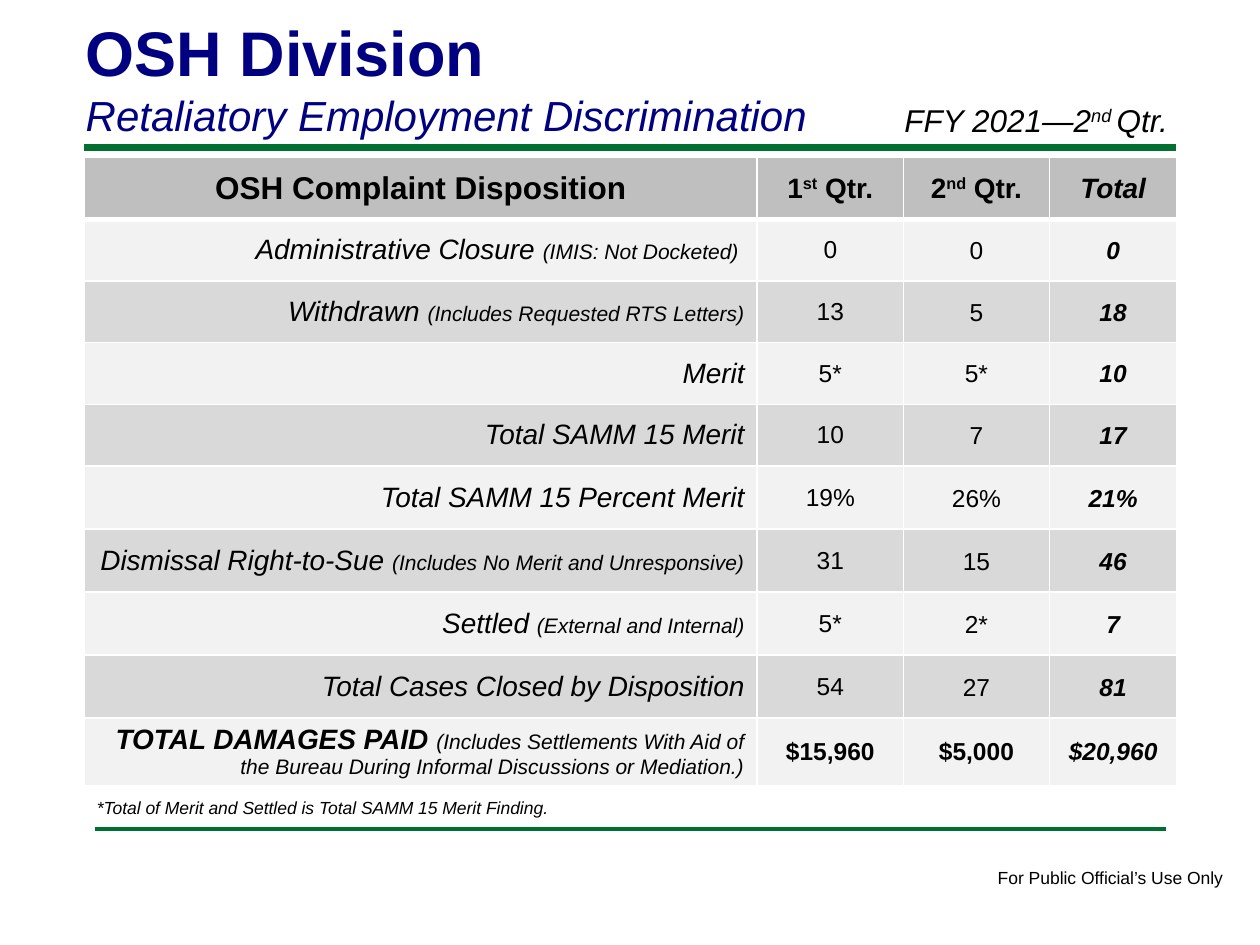
"""Build the OSH Division complaint disposition slide."""
from dataclasses import dataclass

from lxml import etree
from pptx import Presentation
from pptx.dml.color import RGBColor as Rgb
from pptx.enum import shapes, text
from pptx.oxml import ns
from pptx.util import Inches, Pt


@dataclass(frozen=True)
class Theme:
    font: str = "Arial"
    navy: str = "000080"
    green: str = "007030"
    ink: str = "000000"
    white: str = "FFFFFF"
    head: str = "BFBFBF"
    light: str = "F2F2F2"
    dark: str = "D9D9D9"
    title: int = 36
    sub: int = 24
    large: int = 18
    label: int = 16
    value: int = 14
    note: int = 12
    small: int = 10


look = Theme()


def write(para, words, size, bold=False, italic=False, color=look.ink, sup=False):
    run = para.add_run()
    run.text = words
    font = run.font
    font.name, font.size = look.font, Pt(size)
    font.bold, font.italic = bold, italic
    font.color.rgb = Rgb.from_string(color)
    if sup:
        run._r.get_or_add_rPr().set("baseline", "30000")


def paint(cell, color, base):
    props = cell._tc.get_or_add_tcPr()
    for side, width in (("L", 1), ("R", 1), ("T", 1), ("B", base)):
        line = etree.SubElement(props, ns.qn(f"a:ln{side}"), w=str(Pt(width)))
        fill = etree.SubElement(line, ns.qn("a:solidFill"))
        etree.SubElement(fill, ns.qn("a:srgbClr"), val=look.white)
    cell.fill.solid()
    cell.fill.fore_color.rgb = Rgb.from_string(color)
    cell.vertical_anchor = text.MSO_ANCHOR.MIDDLE


deck = Presentation()
deck.slide_width, deck.slide_height = Inches(10), Inches(7.5)
slide = deck.slides.add_slide(deck.slide_layouts[5])
items = slide.shapes

for left, right, top, width in ((0.67, 9.33, 1.17, 4), (0.75, 9.25, 6.58, 2)):
    rule = items.add_connector(shapes.MSO_CONNECTOR.STRAIGHT,
                               Inches(left), Inches(top), Inches(right), Inches(top))
    rule.line.color.rgb = Rgb.from_string(look.green)
    rule.line.width = Pt(width)
    etree.SubElement(rule._element.spPr, ns.qn("a:effectLst"))

title = items.title
title.left, title.top = Inches(0.58), Inches(0.06)
title.width, title.height = Inches(8.25), Inches(1.11)
frame = title.text_frame
frame.auto_size = text.MSO_AUTO_SIZE.NONE
frame.vertical_anchor = text.MSO_ANCHOR.TOP
first, second = frame.paragraphs[0], frame.add_paragraph()
first.alignment = second.alignment = text.PP_ALIGN.LEFT
write(first, "OSH Division", look.title, bold=True, color=look.navy)
write(second, "Retaliatory Employment Discrimination", look.sub, italic=True, color=look.navy)

heads = (
    (("OSH Complaint Disposition", look.large, True),),
    (("1", look.label, True), ("st", look.label, True, False, look.ink, True),
     (" Qtr.", look.label, True)),
    (("2", look.label, True), ("nd", look.label, True, False, look.ink, True),
     (" Qtr.", look.label, True)),
    (("Total", look.label, True, True),),
)
rows = (
    ("Administrative Closure ", "(IMIS: Not Docketed) ", "0", "0", "0"),
    ("Withdrawn ", "(Includes Requested RTS Letters)", "13", "5", "18"),
    ("Merit", "", "5*", "5*", "10"),
    ("Total SAMM 15 Merit", "", "10", "7", "17"),
    ("Total SAMM 15 Percent Merit", "", "19%", "26%", "21%"),
    ("Dismissal Right-to-Sue ", "(Includes No Merit and Unresponsive)", "31", "15", "46"),
    ("Settled ", "(External and Internal)", "5*", "2*", "7"),
    ("Total Cases Closed by Disposition", "", "54", "27", "81"),
    ("TOTAL DAMAGES PAID ",
     "(Includes Settlements With Aid of the Bureau During Informal Discussions or Mediation.)",
     "$15,960", "$5,000", "$20,960"),
)

grid = items.add_table(len(rows) + 1, len(heads), Inches(0.67), Inches(1.25),
                       Inches(8.67), Inches(5.03)).table
for col, width in zip(grid.columns, (5.34, 1.16, 1.16, 1.01)):
    col.width = Inches(width)
for row, height in zip(grid.rows, [0.49] * 5 + [0.5] * 4 + [0.54]):
    row.height = Inches(height)

for col, runs in enumerate(heads):
    cell = grid.cell(0, col)
    paint(cell, look.head, 3)
    para = cell.text_frame.paragraphs[0]
    para.alignment = text.PP_ALIGN.CENTER
    for run in runs:
        write(para, *run)

for num, (label, note, *values) in enumerate(rows, 1):
    last = num == len(rows)
    shade = look.light if num % 2 else look.dark
    cell = grid.cell(num, 0)
    paint(cell, shade, 1)
    para = cell.text_frame.paragraphs[0]
    para.alignment = text.PP_ALIGN.RIGHT
    write(para, label, look.label, bold=last, italic=True)
    if note:
        write(para, note, look.note, italic=True)
    for col, value in enumerate(values, 1):
        cell = grid.cell(num, col)
        paint(cell, shade, 1)
        para = cell.text_frame.paragraphs[0]
        para.alignment = text.PP_ALIGN.CENTER
        if col > 1 and not last:
            para.line_spacing, para.space_after = 1.07, Pt(8)
        write(para, value, look.value, bold=last or col == 3, italic=col == 3)

notes = (
    (7.82, 6.83, 2.01, 0.27, False, (("For Public Official’s Use Only", look.small),)),
    (0.67, 6.28, 3.84, 0.27, False,
     (("*Total of Merit and Settled is Total SAMM 15 Merit Finding.", look.small, False, True),)),
    (7.08, 0.75, 2.5, 0.4, True,
     (("FFY 2021—2", look.large, False, True),
      ("nd ", look.large, False, True, look.ink, True),
      ("Qtr.", look.large, False, True))),
)
for left, top, width, height, wrap, runs in notes:
    frame = items.add_textbox(Inches(left), Inches(top), Inches(width), Inches(height)).text_frame
    frame.word_wrap = wrap
    frame.auto_size = text.MSO_AUTO_SIZE.SHAPE_TO_FIT_TEXT
    for run in runs:
        write(frame.paragraphs[0], *run)

deck.save("out.pptx")
